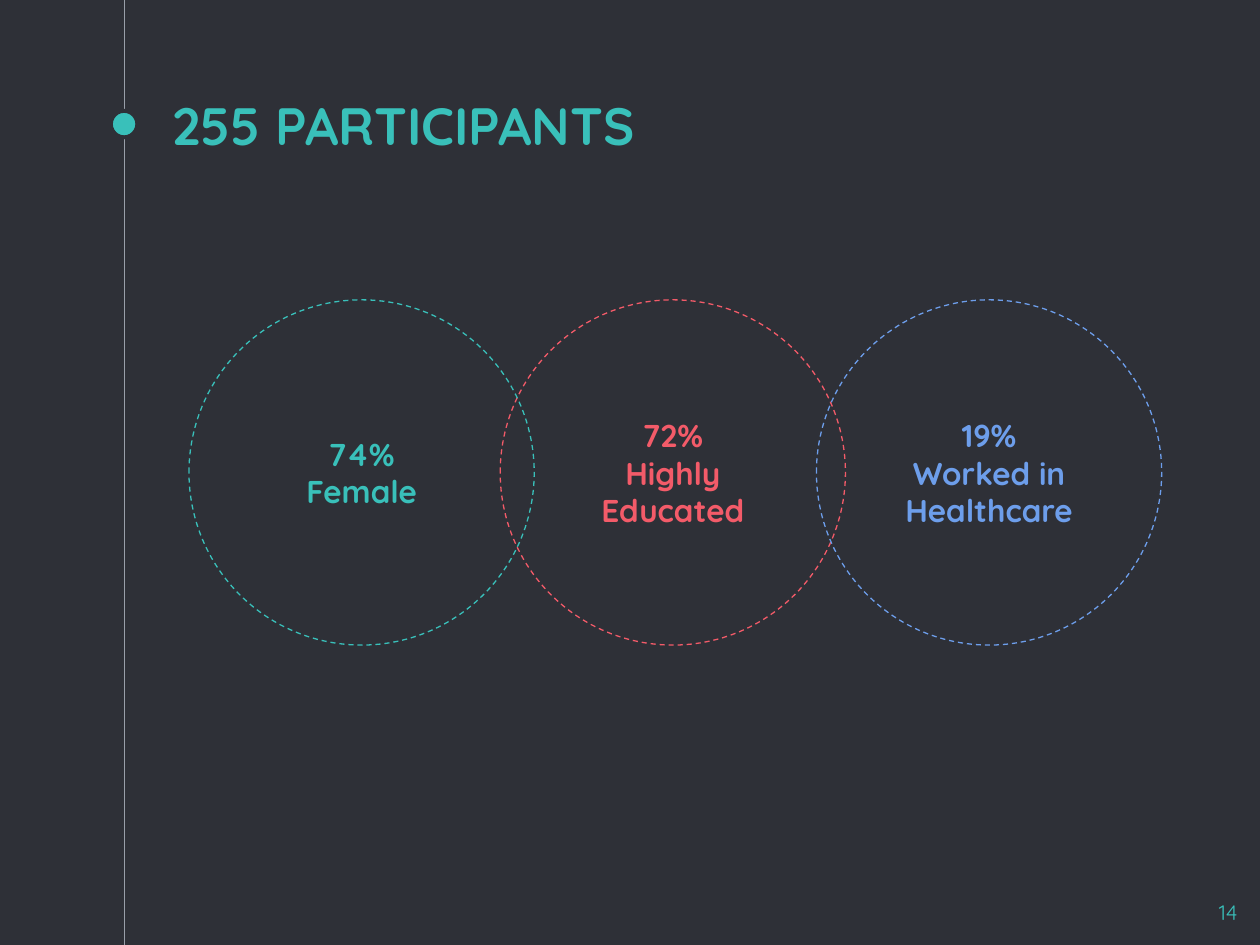
from dataclasses import dataclass

from pptx import Presentation
from pptx.dml.color import RGBColor
from pptx.enum import dml, shapes, text
from pptx.oxml import ns
from pptx.util import Inches, Pt
from lxml import etree


@dataclass(frozen=True)
class Theme:
    background: str = "2E3037"
    rail: str = "999FA9"
    teal: str = "39C0BA"
    red: str = "F35B69"
    blue: str = "6D9EEB"
    font: str = "Quicksand"
    title_size: int = 30
    label_size: int = 18
    number_size: int = 12


THEME = Theme()


def rgb(value):
    return RGBColor.from_string(value)


def write_text(sp, lines, *, size, color, bold=False,
               align=text.PP_ALIGN.LEFT, anchor=text.MSO_ANCHOR.TOP):
    tf = sp.text_frame
    tf.word_wrap = True
    tf.vertical_anchor = anchor
    tf.margin_left = tf.margin_right = Inches(0.1)
    tf.margin_top = tf.margin_bottom = Inches(0.1)
    for i, line in enumerate(lines):
        p = tf.paragraphs[0] if i == 0 else tf.add_paragraph()
        p.alignment = align
        r = p.add_run()
        r.text = line
        r.font.name = THEME.font
        r.font.size = Pt(size)
        r.font.bold = bold
        r.font.color.rgb = rgb(color)


def add_text(s, box, lines, **style):
    sp = s.shapes.add_textbox(*map(Inches, box))
    write_text(sp, lines, **style)
    return sp


def add_circle(s, left, top, diameter, *, line, width, fill=None, dash=None):
    sp = s.shapes.add_shape(
        shapes.MSO_SHAPE.OVAL, Inches(left), Inches(top),
        Inches(diameter), Inches(diameter))
    sp.shadow.inherit = False
    if fill:
        sp.fill.solid()
        sp.fill.fore_color.rgb = rgb(fill)
    else:
        sp.fill.background()
    sp.line.color.rgb = rgb(line)
    sp.line.width = Pt(width)
    if dash:
        sp.line.dash_style = dash
    return sp


def add_rail(s, x, bottom):
    line = s.shapes.add_connector(
        shapes.MSO_CONNECTOR.STRAIGHT, Inches(x), 0, Inches(x), Inches(bottom))
    line.line.color.rgb = rgb(THEME.rail)
    line.line.width = Pt(0.75)
    etree.SubElement(line._element.spPr, ns.qn("a:effectLst"))


def add_finding(s, left, lines, color):
    sp = add_circle(s, left, 2.38, 2.74, line=color, width=0.75,
                    dash=dml.MSO_LINE.DASH)
    write_text(sp, lines, size=THEME.label_size, color=color, bold=True,
               align=text.PP_ALIGN.CENTER, anchor=text.MSO_ANCHOR.MIDDLE)


def main():
    prs = Presentation()
    prs.slide_width, prs.slide_height = Inches(10), Inches(7.5)
    s = prs.slides.add_slide(prs.slide_layouts[6])
    s.background.fill.solid()
    s.background.fill.fore_color.rgb = rgb(THEME.background)

    add_rail(s, 0.99, 7.5)
    add_circle(s, 0.88, 0.88, 0.21, line=THEME.background, width=2.25,
               fill=THEME.teal)
    add_text(s, (1.27, 0.73, 7.5, 0.61), ["255 PARTICIPANTS"],
             size=THEME.title_size, color=THEME.teal, bold=True,
             anchor=text.MSO_ANCHOR.BOTTOM)

    findings = (
        (3.97, ["72%", "Highly", "Educated"], THEME.red),
        (1.5, ["74%", "Female"], THEME.teal),
        (6.48, ["19%", "Worked in", "Healthcare"], THEME.blue),
    )
    for left, lines, color in findings:
        add_finding(s, left, lines, color)

    add_text(s, (9.32, 7.04, 0.6, 0.46), ["14"], size=THEME.number_size,
             color=THEME.teal, align=text.PP_ALIGN.RIGHT)
    prs.save("out.pptx")


if __name__ == "__main__":
    main()
